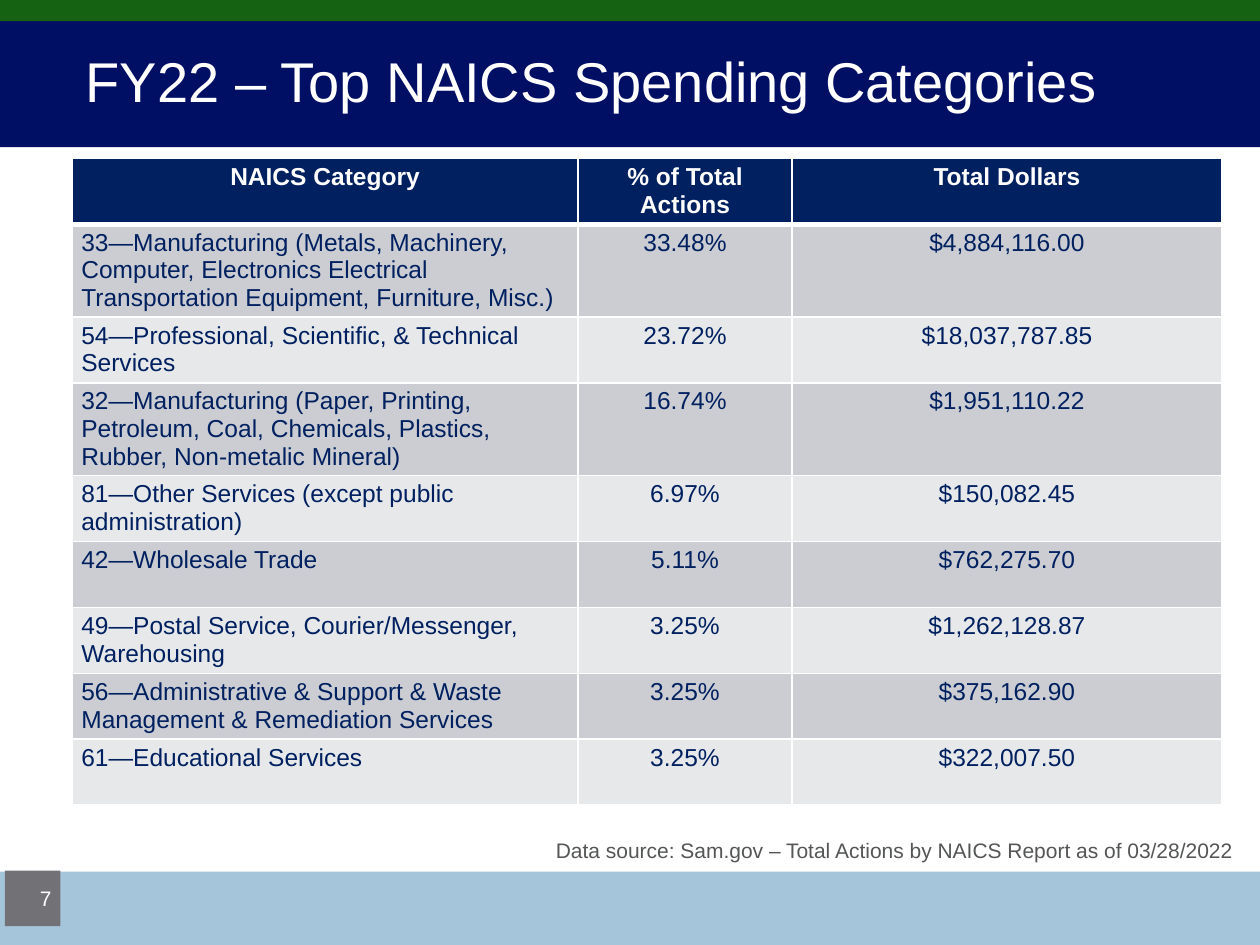
from pptx import Presentation
from pptx.dml.color import RGBColor
from pptx.enum.shapes import MSO_SHAPE
from pptx.enum.text import MSO_ANCHOR, MSO_AUTO_SIZE, PP_ALIGN
from pptx.oxml import parse_xml
from pptx.oxml.ns import nsdecls
from pptx.util import Cm, Pt

FONT = "Arial"
WHITE, NAVY = "FFFFFF", "002060"
ROW_FILLS = ("CCCDD2", "E7E8EA")
COLUMN_WIDTHS = (10.19, 4.32, 8.66)
ROW_HEIGHT = 1.33

HEADINGS = ("NAICS Category", "% of Total Actions", "Total Dollars")
CATEGORIES = (
    ("33—Manufacturing (Metals, Machinery, Computer, Electronics Electrical "
     "Transportation Equipment, Furniture, Misc.)", "33.48%", "$4,884,116.00"),
    ("54—Professional, Scientific, & Technical Services", "23.72%", "$18,037,787.85"),
    ("32—Manufacturing (Paper, Printing, Petroleum, Coal, Chemicals, Plastics, "
     "Rubber, Non-metalic Mineral)", "16.74%", "$1,951,110.22"),
    ("81—Other Services (except public administration)", "6.97%", "$150,082.45"),
    ("42—Wholesale Trade", "5.11%", "$762,275.70"),
    ("49—Postal Service, Courier/Messenger, Warehousing", "3.25%", "$1,262,128.87"),
    ("56—Administrative & Support & Waste Management & Remediation Services",
     "3.25%", "$375,162.90"),
    ("61—Educational Services", "3.25%", "$322,007.50"),
)


def color(hex_value):
    return RGBColor.from_string(hex_value)


def set_all(target, values):
    for name, value in values.items():
        setattr(target, name, value)


def write(frame, text, size, hex_value, align=PP_ALIGN.LEFT, bold=False):
    frame.text = text
    paragraph = frame.paragraphs[0]
    paragraph.alignment = align
    set_all(paragraph.runs[0].font, {"name": FONT, "size": Pt(size), "bold": bold})
    paragraph.runs[0].font.color.rgb = color(hex_value)


def add_band(slide, left, top, width, height, hex_value):
    band = slide.shapes.add_shape(
        MSO_SHAPE.RECTANGLE, Cm(left), Cm(top), Cm(width), Cm(height))
    band.shadow.inherit = False
    band.fill.solid()
    band.fill.fore_color.rgb = color(hex_value)
    band.line.fill.background()
    return band


def add_title(slide, text, behind):
    title = slide.shapes.title
    set_all(title, {"left": Cm(1.73), "top": Cm(0.86),
                    "width": Cm(22.89), "height": Cm(1.52)})
    set_all(title.text_frame, {
        "margin_left": 0, "margin_right": 0, "word_wrap": True,
        "auto_size": MSO_AUTO_SIZE.NONE, "vertical_anchor": MSO_ANCHOR.MIDDLE})
    write(title.text_frame, text, 32, WHITE)
    # Bring the title in front of the bands
    behind.element.addnext(title.element)


def add_page_number(slide, text):
    badge = add_band(slide, 0.1, 17.55, 1.12, 1.12, "727176")
    set_all(badge.text_frame, {
        "margin_left": Cm(0.18), "margin_right": Cm(0.18),
        "margin_top": Cm(0.1), "margin_bottom": Cm(0.1),
        "word_wrap": False, "vertical_anchor": MSO_ANCHOR.MIDDLE})
    write(badge.text_frame, text, 12, WHITE, PP_ALIGN.RIGHT)


def set_borders(cell, top, bottom):
    properties = cell._tc.get_or_add_tcPr()
    for side, points in {"L": 1, "R": 1, "T": top, "B": bottom}.items():
        properties.append(parse_xml(
            f'<a:ln{side} {nsdecls("a")} w="{Pt(points)}"><a:solidFill>'
            f'<a:srgbClr val="{WHITE}"/></a:solidFill></a:ln{side}>'))


def format_cell(cell, text, row, column):
    header = row == 0
    set_borders(cell, top=3 if row == 1 else 1, bottom=3 if header else 1)
    cell.fill.solid()
    cell.fill.fore_color.rgb = color(NAVY if header else ROW_FILLS[(row - 1) % 2])
    set_all(cell, {"margin_left": Cm(0.18), "margin_right": Cm(0.18),
                   "margin_top": Cm(0.1), "margin_bottom": Cm(0.1)})
    align = PP_ALIGN.CENTER if header or column else PP_ALIGN.LEFT
    write(cell.text_frame, text, 14, WHITE if header else NAVY, align, header)


def add_spending_table(slide):
    records = (HEADINGS, *CATEGORIES)
    spending = slide.shapes.add_table(
        len(records), len(HEADINGS), Cm(1.46), Cm(3.19),
        Cm(sum(COLUMN_WIDTHS)), Cm(ROW_HEIGHT * len(records))).table
    for column, width in zip(spending.columns, COLUMN_WIDTHS):
        column.width = Cm(width)
    for row, record in enumerate(records):
        for column, text in enumerate(record):
            format_cell(spending.cell(row, column), text, row, column)


def add_source_note(slide, text):
    note = slide.shapes.add_textbox(Cm(7.7), Cm(16.76), Cm(17.42), Cm(0.77))
    note.text_frame.word_wrap = True
    write(note.text_frame, text, 12, "545555", PP_ALIGN.RIGHT)


def main():
    deck = Presentation()
    set_all(deck, {"slide_width": Cm(25.4), "slide_height": Cm(19.05)})
    slide = deck.slides.add_slide(deck.slide_layouts[5])

    # Header and footer bands
    add_band(slide, 0, 0, 25.4, 2.97, "000F64")
    add_band(slide, 0, 17.57, 25.4, 1.48, "A5C5DA")
    top_stripe = add_band(slide, 0, 0, 25.4, 0.43, "156312")

    # Title and page number
    add_title(slide, "FY22 – Top NAICS Spending Categories", top_stripe)
    add_page_number(slide, "7")

    # Spending table and its source
    add_spending_table(slide)
    add_source_note(
        slide, "Data source: Sam.gov – Total Actions by NAICS Report as of 03/28/2022")

    deck.save("out.pptx")


if __name__ == "__main__":
    main()
